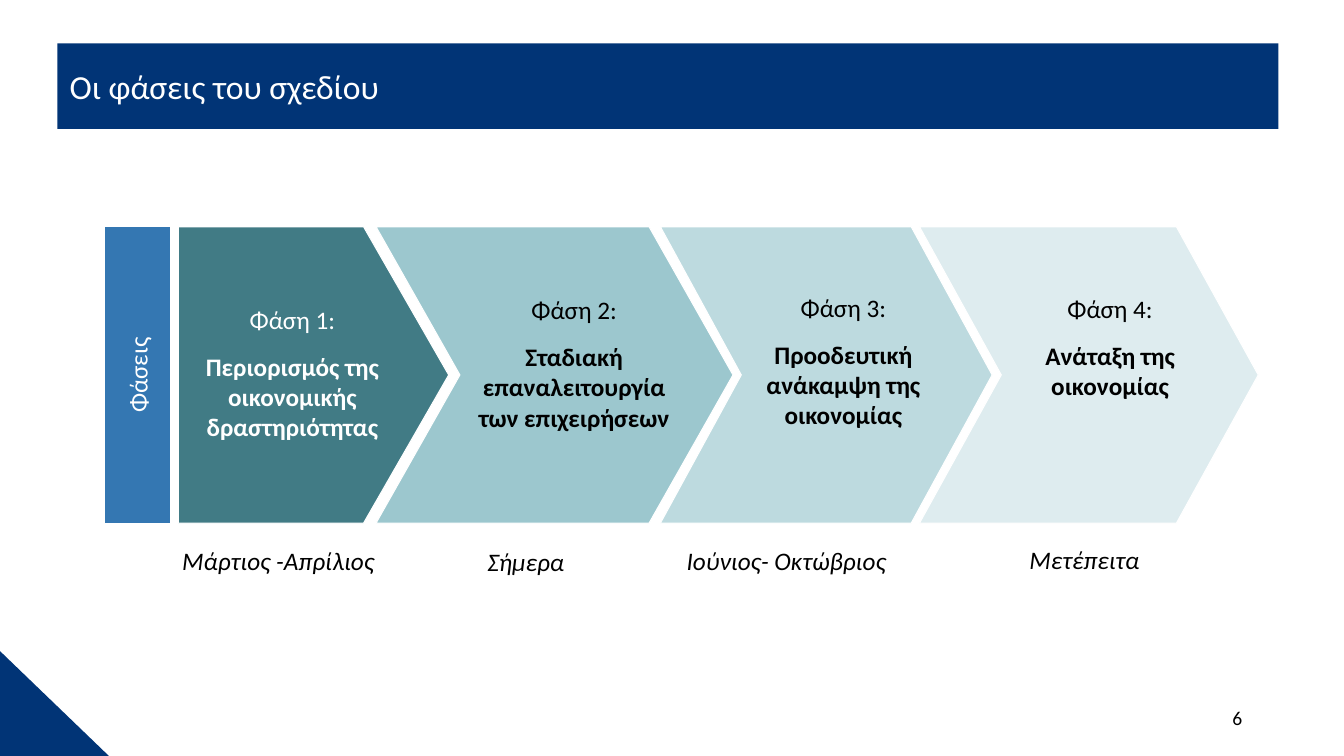
from lxml.etree import SubElement
from pptx import Presentation
from pptx.dml.color import RGBColor
from pptx.enum.shapes import MSO_SHAPE
from pptx.enum.text import MSO_ANCHOR, MSO_AUTO_SIZE, PP_ALIGN
from pptx.oxml.ns import qn
from pptx.util import Inches, Pt


def rgb(value):
    """Turn a hex string into a colour."""
    return RGBColor.from_string(value)


class Deck:
    """Holds the style and the current slide, and draws each kind of element."""

    FONT = "Calibri"
    NAVY, BLUE, WHITE, BLACK = "013476", "3477B2", "FFFFFF", "000000"

    def __init__(self, prs):
        self.slide = prs.slides.add_slide(prs.slide_layouts[5])

    def fill_text(self, s, paras, color, size=18, align=PP_ALIGN.CENTER,
                  anchor=MSO_ANCHOR.MIDDLE, insets=(0, 0, 0, 0), indent=0,
                  gap=0):
        """Fill a shape with paragraphs given as (text, font format) pairs."""
        tf = s.text_frame
        left, top, right, bottom = (Inches(v) for v in insets)
        frame = {"word_wrap": True, "auto_size": MSO_AUTO_SIZE.NONE,
                 "vertical_anchor": anchor, "margin_left": left,
                 "margin_top": top, "margin_right": right,
                 "margin_bottom": bottom}
        for name, value in frame.items():
            setattr(tf, name, value)
        for i, (text, style) in enumerate(paras):
            p = tf.add_paragraph() if i else tf.paragraphs[0]
            p.alignment = align
            if indent:
                p._p.get_or_add_pPr().set("marL", str(Inches(indent)))
            if i < len(paras) - 1:
                p.space_after = Pt(gap)
            r = p.add_run()
            r.text = text
            font = {"name": self.FONT, "size": Pt(size), **style}
            for name, value in font.items():
                setattr(r.font, name, value)
            r.font.color.rgb = rgb(color)

    def title(self, text, box, preset):
        """Place the title placeholder as a filled banner."""
        s = self.slide.shapes.title
        for name, value in zip(("left", "top", "width", "height"), box):
            setattr(s, name, Inches(value))
        geom = SubElement(s._element.spPr, qn("a:prstGeom"), prst=preset)
        SubElement(geom, qn("a:avLst"))
        s.fill.solid()
        s.fill.fore_color.rgb = rgb(self.NAVY)
        self.fill_text(s, [(text, {})], self.WHITE, size=24,
                       align=PP_ALIGN.LEFT, insets=(0.12, 0.02, 0.12, 0.02))

    def shape(self, kind, box, fill, line=None, adj=None):
        """Add a flat preset shape."""
        s = self.slide.shapes.add_shape(kind, *(Inches(v) for v in box))
        s.shadow.inherit = False
        s.fill.solid()
        s.fill.fore_color.rgb = rgb(fill)
        if line:
            s.line.color.rgb = rgb(line)
            s.line.width = Pt(0.75)
        else:
            s.line.fill.background()
        if adj:
            s.adjustments[0] = adj
        return s

    def text(self, box, paras, color, **style):
        """Add a text box."""
        s = self.slide.shapes.add_textbox(*(Inches(v) for v in box))
        self.fill_text(s, paras, color, **style)


def main():
    """Build the slide with the phases of the plan."""
    prs = Presentation()
    prs.slide_width, prs.slide_height = Inches(13.33), Inches(7.5)
    deck = Deck(prs)
    top, height = 2.25, 2.94

    deck.shape(MSO_SHAPE.RIGHT_TRIANGLE, (0, 6.46, 1.08, 1.04), deck.NAVY)
    deck.title("Οι φάσεις του σχεδίου", (0.57, 0.43, 12.11, 0.85),
               "snip2DiagRect")
    deck.text((9.42, 6.95, 3, 0.4), [("6", {})], deck.BLACK, size=14,
              align=PP_ALIGN.RIGHT, anchor=MSO_ANCHOR.TOP,
              insets=(0.1, 0.05, 0.1, 0.05))

    label = deck.shape(MSO_SHAPE.RECTANGLE, (1.04, top, 0.65, height),
                       deck.BLUE, deck.WHITE)
    deck.fill_text(label, [("Φάσεις", {})], deck.WHITE)
    label.text_frame._txBody.bodyPr.set("vert", "vert270")

    chevron, pentagon = MSO_SHAPE.CHEVRON, MSO_SHAPE.PENTAGON
    phases = [
        (pentagon, 1.77, 2.68, 0.315, "417B85", deck.WHITE,
         "Περιορισμός της οικονομικής δραστηριότητας",
         (1.87, 2.56, 2.05, 2.28),
         "Μάρτιος -Απρίλιος", (1.55, 5.16, 2.29, 0.79)),
        (chevron, 3.73, 3.54, 0.283, "9CC7CE", deck.BLACK,
         "Σταδιακή επαναλειτουργία των επιχειρήσεων",
         (4.61, 2.42, 2.16, 2.37),
         "Σήμερα", (3.93, 5.17, 2.44, 0.79)),
        (chevron, 6.55, 3.29, 0.273, "BDDADF", deck.BLACK,
         "Προοδευτική ανάκαμψη της οικονομίας",
         (7.24, 2.44, 2.24, 2.28),
         "Ιούνιος- Οκτώβριος", (5.93, 5.16, 3.61, 0.79)),
        (chevron, 9.12, 3.36, 0.276, "DEECEF", deck.BLACK,
         "Ανάταξη της οικονομίας",
         (9.96, 2.49, 2.09, 1.91),
         "Μετέπειτα", (9.53, 5.15, 2.32, 0.79)),
    ]
    for kind, left, width, adj, fill, *_ in phases:
        deck.shape(kind, (left, top, width, height), fill, deck.WHITE, adj)
    for number, phase in enumerate(phases, 1):
        color, goal, goal_box, period, period_box = phase[5:]
        deck.text(goal_box, [(f"Φάση {number}:", {}), (goal, {"bold": True})],
                  color, insets=(0.07, 0.07, 0.06, 0.07), gap=12)
        deck.text(period_box, [(period, {"italic": True})], deck.BLACK,
                  insets=(0.09, 0.09, 0.09, 0.09), indent=0.13)

    prs.save("out.pptx")


if __name__ == "__main__":
    main()
